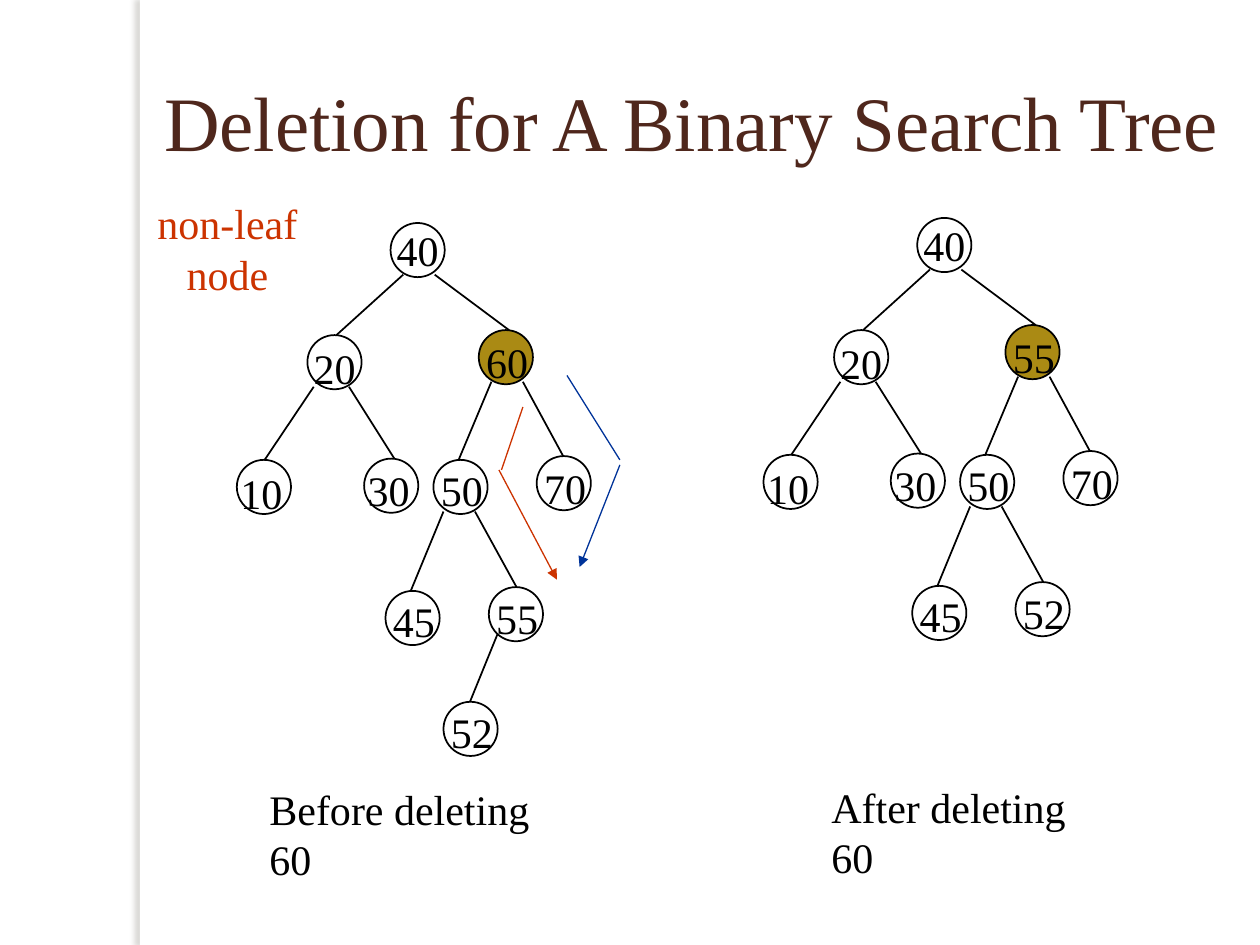
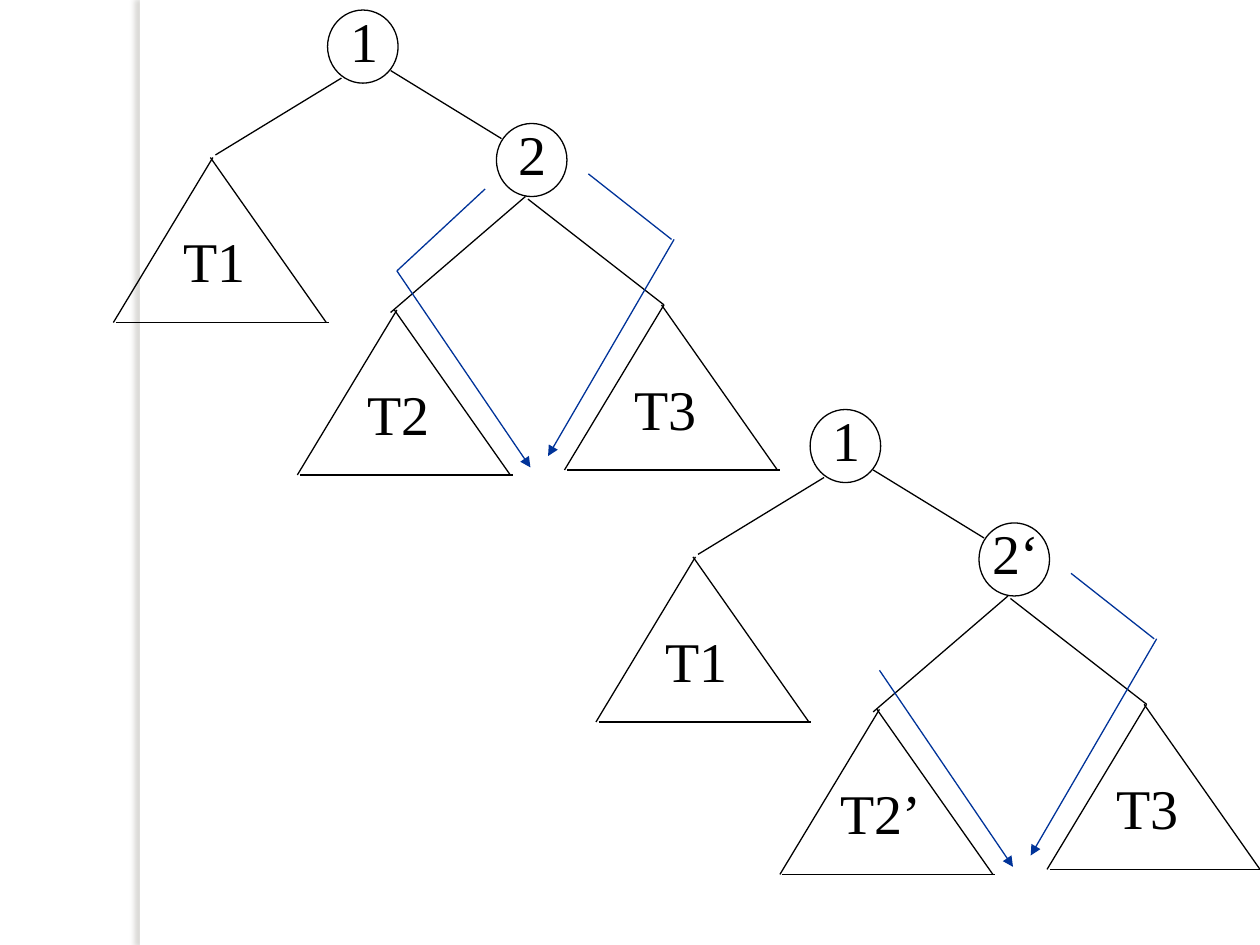
"""Build two slides on deleting a node from a binary search tree."""
import lxml.etree
import pptx
import pptx.dml.color
import pptx.enum.shapes
import pptx.enum.text
import pptx.oxml.ns
import pptx.util

Inches = pptx.util.Inches
Color = pptx.dml.color.RGBColor
Shape = pptx.enum.shapes.MSO_SHAPE
Align = pptx.enum.text.PP_ALIGN
Anchor = pptx.enum.text.MSO_ANCHOR
Fit = pptx.enum.text.MSO_AUTO_SIZE
qn = pptx.oxml.ns.qn

BLACK = Color(0x00, 0x00, 0x00)
WHITE = Color(0xFF, 0xFF, 0xFF)
BROWN = Color(0x4F, 0x27, 0x1C)
GOLD = Color(0xAA, 0x8A, 0x14)
RED = Color(0xCC, 0x33, 0x00)
BLUE = Color(0x00, 0x33, 0x99)
FONT = "Times New Roman"

NODE = 0.43
ROOT = ("40", 3.1, 1.77)
NODES = {
    "left": ("20", 2.44, 2.66, -0.05, 0.01, "root", 0.1, 0.23),
    "right": ("60", 3.8, 2.62, -0.04, 0, "root", 0.35, 0.24),
    "ten": ("10", 1.88, 3.65, -0.07, 0.01, "left", 0.05, 0.22),
    "thirty": ("30", 2.89, 3.64, -0.07, 0, "left", 0.33, 0.24),
    "fifty": ("50", 3.44, 3.65, -0.04, -0.01, "right", 0.1, 0.2),
    "last": ("70", 4.26, 3.62, -0.04, 0, "right", 0.35, 0.21),
    "low": ("45", 3.06, 4.69, -0.04, -0.01, "fifty", 0.08, 0.2),
    "high": ("55", 3.88, 4.66, -0.04, -0.01, "fifty", 0.33, 0.22),
    "leaf": ("52", 3.52, 5.57, -0.04, -0.01, "high", 0.07, 0.21),
}


class Deck:
    def __init__(self):
        self.prs = pptx.Presentation()
        self.prs.slide_width, self.prs.slide_height = Inches(10), Inches(7.5)
        self.slide = None

    def start(self, layout):
        self.slide = self.prs.slides.add_slide(self.prs.slide_layouts[layout])

    def band(self):
        band = self.shape(Shape.RECTANGLE, 1.11, 0, 0.08, 7.5, WHITE, None)
        glow = lxml.etree.SubElement(
            band.element.spPr.find(qn("a:effectLst")), qn("a:outerShdw"),
            blurRad="38100", dist="38100", dir="10800000", algn="tl", rotWithShape="0")
        tint = lxml.etree.SubElement(glow, qn("a:srgbClr"), val="736F63")
        lxml.etree.SubElement(tint, qn("a:alpha"), val="25000")
        self.prs.slide_master.element.cSld.spTree.insert(2, band.element)

    def style(self, frame, text, size, color, align):
        frame.text = text
        for para in frame.paragraphs:
            para.alignment = align
            for run in para.runs:
                run.font.name, run.font.size = FONT, pptx.util.Pt(size)
                run.font.color.rgb = color

    def title(self, text):
        title = self.slide.shapes.title
        title.left, title.top = Inches(0.48), Inches(0.33)
        title.width, title.height = Inches(10.02), Inches(1.25)
        frame = title.text_frame
        frame.auto_size = Fit.NONE
        frame.vertical_anchor = Anchor.MIDDLE
        self.style(frame, text, 44, BROWN, Align.CENTER)

    def text(self, text, x, y, w, h, size=24, color=BLACK, align=Align.LEFT, wrap=False):
        box = self.slide.shapes.add_textbox(Inches(x), Inches(y), Inches(w), Inches(h))
        box.text_frame.word_wrap = wrap
        box.text_frame.auto_size = Fit.NONE if wrap else Fit.SHAPE_TO_FIT_TEXT
        self.style(box.text_frame, text, size, color, align)

    def shape(self, kind, x, y, w, h, fill=None, weight=1):
        shape = self.slide.shapes.add_shape(kind, Inches(x), Inches(y), Inches(w), Inches(h))
        if fill is None:
            shape.fill.background()
        else:
            shape.fill.solid()
            shape.fill.fore_color.rgb = fill
        if weight is None:
            shape.line.fill.background()
        else:
            shape.line.color.rgb = BLACK
            shape.line.width = pptx.util.Pt(weight)
        shape.shadow.inherit = False
        return shape

    def line(self, x1, y1, x2, y2, color=BLACK, weight=0.75, arrow=False):
        line = self.slide.shapes.add_connector(
            pptx.enum.shapes.MSO_CONNECTOR.STRAIGHT,
            Inches(x1), Inches(y1), Inches(x2), Inches(y2))
        line.line.color.rgb = color
        line.line.width = pptx.util.Pt(weight)
        props = line.element.spPr
        if arrow:
            lxml.etree.SubElement(props.find(qn("a:ln")), qn("a:tailEnd"), type="triangle")
        lxml.etree.SubElement(props, qn("a:effectLst"))

    def tree(self, dx, dy, changes, hidden=()):
        value, x, y = ROOT
        root = self.shape(Shape.OVAL, x + dx, y + dy, NODE, NODE)
        root.text_frame.word_wrap = False
        root.text_frame.vertical_anchor = Anchor.MIDDLE
        self.style(root.text_frame, value, 24, BLACK, Align.CENTER)
        spots = {"root": (x + dx, y + dy)}
        for name, (value, x, y, shift, drop, parent, start, end) in NODES.items():
            if name in hidden:
                continue
            x, y = x + dx, y + dy
            spots[name] = x, y
            px, py = spots[parent]
            self.line(px + start, py + (0.37 if name == "leaf" else 0.41), x + end, y, weight=1)
            self.shape(Shape.OVAL, x, y, NODE, NODE, GOLD if name == "right" else None)
            self.text(changes.get(name, value), x + shift, y + drop, 0.53, 0.5)

    def circle(self, text, x, y):
        self.shape(Shape.OVAL, x, y, 0.56, 0.58, weight=0.75)
        w = 0.42 + 0.15 * (len(text) - 1)
        self.text(text, x + 0.29 - w / 2, y - 0.08, w, 0.63, 32, align=Align.CENTER)

    def branch(self, text, x, y):
        base = y + 1.31
        self.line(x, y, x - 0.79, base)
        self.line(x - 0.77, base, x + 0.92, base)
        self.line(x - 0.02, y, x + 0.9, base)
        w = 0.72 + 0.15 * (len(text) - 2)
        self.text(text, x + 0.01 - w / 2, y + 0.5, w, 0.63, 32, align=Align.CENTER)

    def forest(self, dx, dy, node, middle):
        self.circle("1", 2.6 + dx, 0.08 + dy)
        self.circle(node, 3.94 + dx, 0.98 + dy)
        for x1, y1, x2, y2 in ((3.1, 0.56, 3.98, 1.1), (2.71, 0.62, 1.71, 1.23),
                               (4.17, 1.56, 3.1, 2.48), (4.19, 1.58, 5.27, 2.42)):
            self.line(x1 + dx, y1 + dy, x2 + dx, y2 + dy)
        for text, x, y in (("T1", 1.69, 1.25), (middle, 3.15, 2.46), ("T3", 5.27, 2.42)):
            self.branch(text, x + dx, y + dy)
        for x1, y1, x2, y2, arrow in ((3.15, 2.15, 4.21, 3.71, True),
                                      (4.67, 1.38, 5.33, 1.9, False),
                                      (5.35, 1.9, 4.35, 3.62, True)):
            self.line(x1 + dx, y1 + dy, x2 + dx, y2 + dy, BLUE, arrow=arrow)


def main():
    deck = Deck()
    deck.start(5)
    deck.band()
    deck.title("Deletion for A Binary Search Tree")
    deck.tree(0, 0, {})
    deck.tree(4.18, -0.04, {"right": "55", "high": "52"}, ("leaf",))
    deck.text("Before deleting 60", 2.04, 6.17, 2.6, 0.5, wrap=True)
    deck.text("After deleting 60", 6.5, 6.15, 2.4, 0.5, wrap=True)
    deck.text("non-leaf\nnode", 1.15, 1.52, 1.31, 0.9, color=RED, align=Align.CENTER)
    deck.line(4.15, 3.23, 3.98, 3.73, RED)
    deck.line(3.96, 3.73, 4.42, 4.6, RED, arrow=True)
    deck.line(4.5, 2.98, 4.92, 3.65, BLUE)
    deck.line(4.92, 3.69, 4.6, 4.5, BLUE, arrow=True)

    deck.start(6)
    deck.forest(0, 0, "2", "T2")
    deck.line(3.85, 1.5, 3.15, 2.15, BLUE)
    deck.forest(3.83, 3.17, "2‘", "T2’")
    deck.prs.save("out.pptx")


if __name__ == "__main__":
    main()
